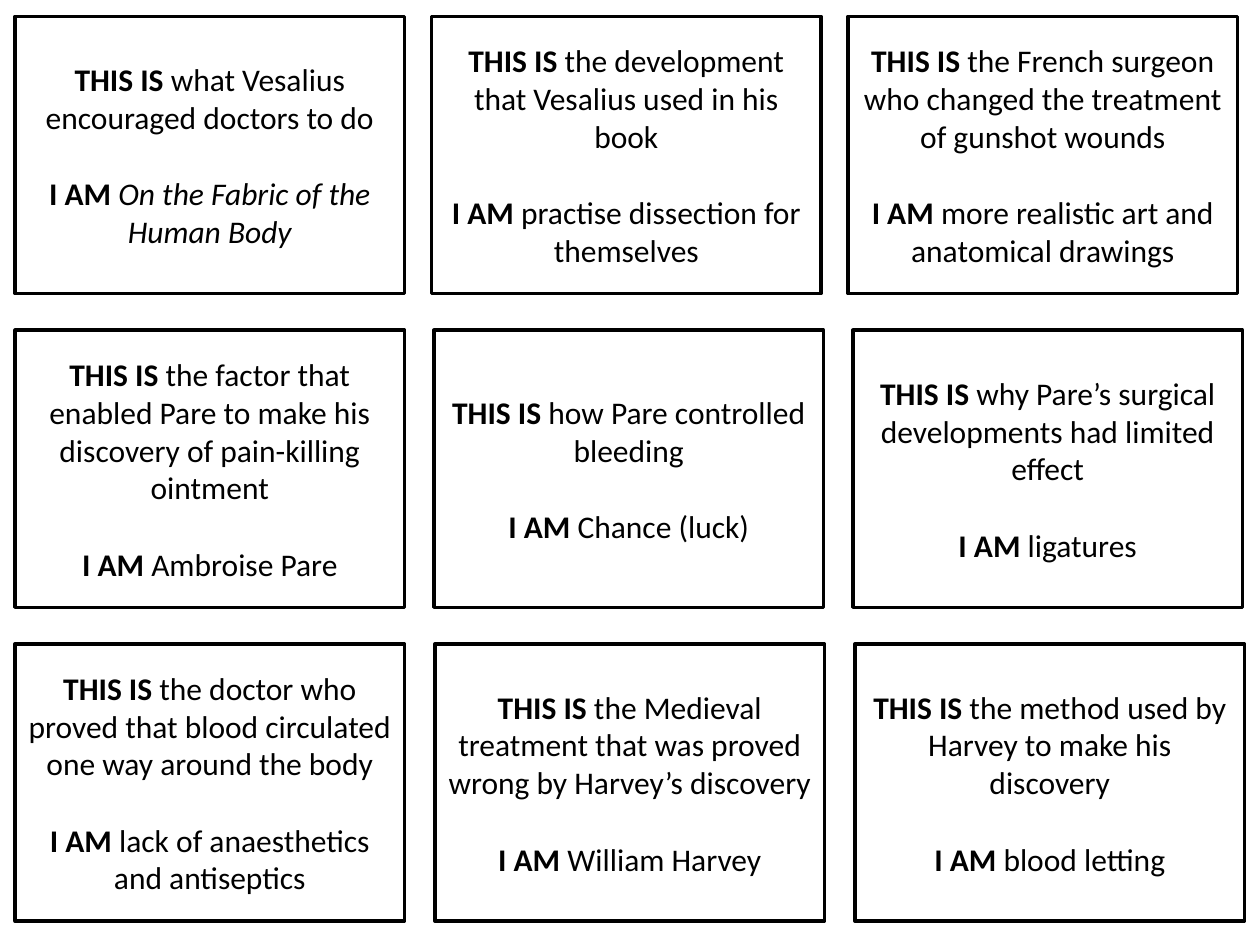
from dataclasses import dataclass

from pptx import Presentation
from pptx.dml.color import RGBColor
from pptx.enum import shapes, text
from pptx.util import Pt

# Each card: (clue to the next card, answer to the previous one, answer in italics)
CARDS = [
    [("what Vesalius encouraged doctors to do", "On the Fabric of the Human Body", True),
     ("the development that Vesalius used in his book",
      "practise dissection for themselves", False),
     ("the French surgeon who changed the treatment of gunshot wounds",
      "more realistic art and anatomical drawings", False)],
    [("the factor that enabled Pare to make his discovery of pain-killing ointment",
      "Ambroise Pare", False),
     ("how Pare controlled bleeding", "Chance (luck)", False),
     ("why Pare’s surgical developments had limited effect", "ligatures", False)],
    [("the doctor who proved that blood circulated one way around the body",
      "lack of anaesthetics and antiseptics", False),
     ("the Medieval treatment that was proved wrong by Harvey’s discovery",
      "William Harvey", False),
     ("the method used by Harvey to make his discovery", "blood letting", False)],
]

LEFT, TOP = 8.64, 9.36
CARD_W, CARD_H = 222.5, 158.4
ROW_STEP = 179.3
COLUMN_STEPS = [238, 239.4, 240]  # one per row


@dataclass(frozen=True)
class Theme:
    font: str = "Calibri"
    size: float = 18
    line_width: float = 2
    answer_gap: float = 22
    ink: RGBColor = RGBColor(0, 0, 0)
    paper: RGBColor = RGBColor(255, 255, 255)


THEME = Theme()


def write_line(p, label, words, italic=False):
    """Write a bold label followed by plain or italic words."""
    p.alignment = text.PP_ALIGN.CENTER
    p.font.name, p.font.size = THEME.font, Pt(THEME.size)
    p.font.color.rgb = THEME.ink
    r = p.add_run()
    r.text = label
    r.font.bold = True
    r = p.add_run()
    r.text = " " + words
    if italic:
        r.font.italic = True


def add_card(slide, x, y, clue, answer, italic):
    sp = slide.shapes.add_shape(shapes.MSO_SHAPE.RECTANGLE,
                                Pt(x), Pt(y), Pt(CARD_W), Pt(CARD_H))
    sp.shadow.inherit = False
    sp.fill.solid()
    sp.fill.fore_color.rgb = THEME.paper
    sp.line.color.rgb = THEME.ink
    sp.line.width = Pt(THEME.line_width)
    tf = sp.text_frame
    tf.word_wrap = True
    tf.vertical_anchor = text.MSO_ANCHOR.MIDDLE
    write_line(tf.paragraphs[0], "THIS IS", clue)
    p = tf.add_paragraph()
    p.space_before = Pt(THEME.answer_gap)
    write_line(p, "I AM", answer, italic)


def main():
    prs = Presentation()
    prs.slide_width, prs.slide_height = Pt(720), Pt(540)
    slide = prs.slides.add_slide(prs.slide_layouts[6])
    for row, (cards, step) in enumerate(zip(CARDS, COLUMN_STEPS)):
        for column, card in enumerate(cards):
            add_card(slide, LEFT + column * step, TOP + row * ROW_STEP, *card)
    prs.save("out.pptx")


if __name__ == "__main__":
    main()
